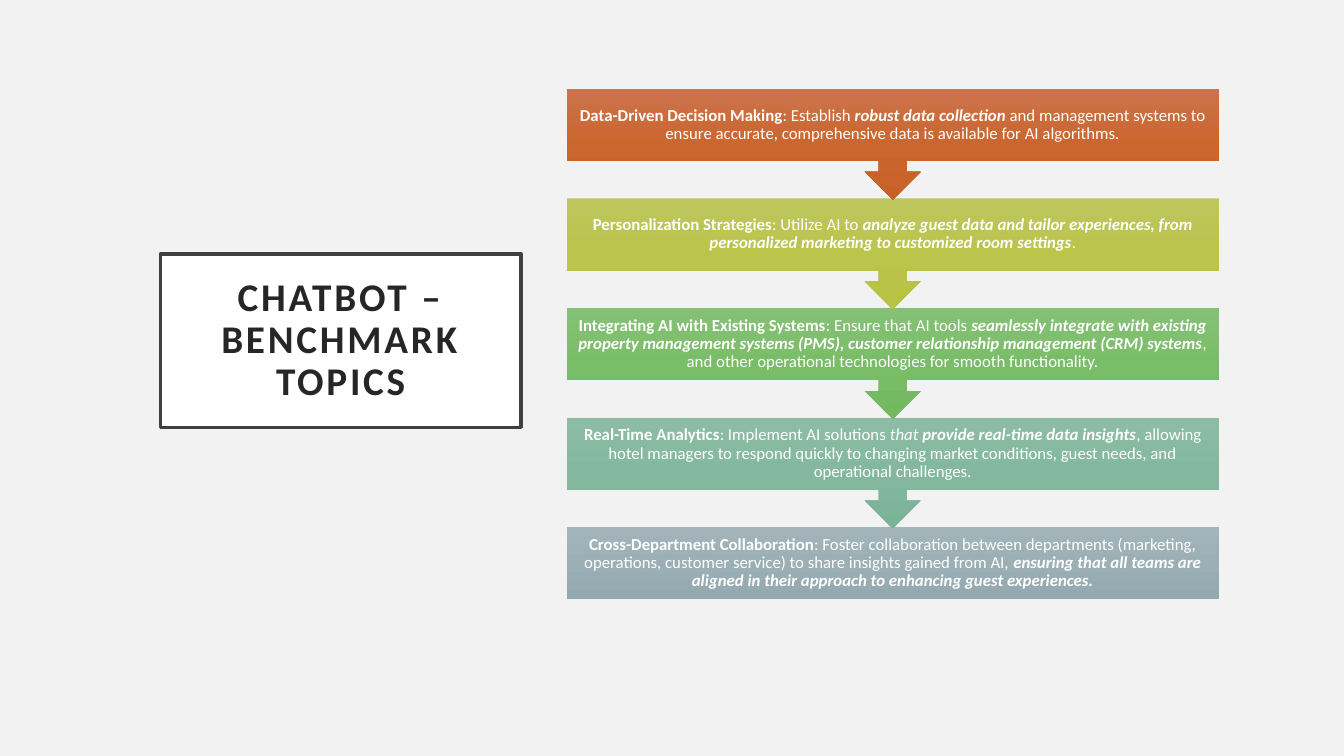
import copy
from dataclasses import dataclass

import pptx
import pptx.dml.color
import pptx.enum.shapes
import pptx.enum.text
import pptx.oxml.ns
import pptx.util

SHAPES = pptx.enum.shapes.MSO_SHAPE
ANCHOR = pptx.enum.text.MSO_ANCHOR
ALIGN = pptx.enum.text.PP_ALIGN
FONT = "Calibri"

# Step flow, in percent of the slide's width and height
FLOW_LEFT, FLOW_WIDTH = 42.16, 48.53
FLOW_TOP, STEP_PITCH = 11.73, 14.5
CALLOUT_HEIGHT, BODY_HEIGHT = 14.67, 9.5


@dataclass(frozen=True)
class Area:
    """A rectangle in percent of the slide's size."""
    left: float
    top: float
    width: float
    height: float


@dataclass(frozen=True)
class Span:
    text: str
    bold: bool = False
    italic: bool = False


@dataclass(frozen=True)
class Step:
    shades: tuple[str, str, str]
    spans: tuple[Span, ...]


TITLE_AREA = Area(11.93, 33.6, 26.85, 22.93)

STEPS = (
    Step(("CC734B", "CB662F", "C86128"), (
        Span("Data-Driven Decision Making", bold=True),
        Span(": Establish "),
        Span("robust data collection", bold=True, italic=True),
        Span(" and management systems to ensure accurate, comprehensive data "
             "is available for AI algorithms."))),
    Step(("BEC65E", "BBC44B", "B8C243"), (
        Span("Personalization Strategies", bold=True),
        Span(": Utilize AI to "),
        Span("analyze guest data and tailor experiences, from personalized "
             "marketing to customized room settings", bold=True, italic=True),
        Span("."))),
    Step(("85C076", "7ABD68", "73B960"), (
        Span("Integrating AI with Existing Systems", bold=True),
        Span(": Ensure that AI tools "),
        Span("seamlessly integrate with existing property management systems "
             "(PMS), customer relationship management (CRM) systems",
             bold=True, italic=True),
        Span(",", italic=True),
        Span(" and other operational technologies for smooth functionality."))),
    Step(("8DBCA5", "83B89E", "7BB398"), (
        Span("Real-Time Analytics", bold=True),
        Span(": Implement AI solutions "),
        Span("that ", italic=True),
        Span("provide real-time data insights", bold=True, italic=True),
        Span(", allowing hotel managers to respond quickly to changing market "
             "conditions, guest needs, and operational challenges."))),
    Step(("A3B5BB", "9BAFB5", "93A9AF"), (
        Span("Cross-Department Collaboration", bold=True),
        Span(": Foster collaboration between departments (marketing, "
             "operations, customer service) to share insights gained from AI, "),
        Span("ensuring that all teams are aligned in their approach to "
             "enhancing guest experiences.", bold=True, italic=True))),
)

deck = pptx.Presentation()
deck.slide_width = pptx.util.Inches(13.33)
deck.slide_height = pptx.util.Inches(7.5)


def color(value: str) -> pptx.dml.color.RGBColor:
    return pptx.dml.color.RGBColor.from_string(value)


def bounds(area: Area) -> tuple[int, int, int, int]:
    return (int(deck.slide_width * area.left / 100),
            int(deck.slide_height * area.top / 100),
            int(deck.slide_width * area.width / 100),
            int(deck.slide_height * area.height / 100))


def write(box, spans: tuple[Span, ...], size: float, ink: str,
          inset: float, tracking: int = 0) -> None:
    frame = box.text_frame
    frame.word_wrap = True
    frame.auto_size = pptx.enum.text.MSO_AUTO_SIZE.NONE
    frame.vertical_anchor = ANCHOR.MIDDLE
    margin = pptx.util.Inches(inset)
    frame.margin_left = frame.margin_right = margin
    frame.margin_top = frame.margin_bottom = margin
    para = frame.paragraphs[0]
    para.alignment = ALIGN.CENTER
    para.line_spacing = 0.9
    for span in spans:
        run = para.add_run()
        run.text = span.text
        run.font.name = FONT
        run.font.size = pptx.util.Pt(size)
        run.font.bold = span.bold
        run.font.italic = span.italic
        run.font.color.rgb = color(ink)
        if tracking:
            run.font._element.set("spc", str(tracking))


def shade(box, shades: tuple[str, str, str]) -> None:
    """Fill from top to bottom with three evenly spaced shades."""
    box.fill.gradient()
    box.fill.gradient_angle = 270
    stop_list = box._element.spPr.find(".//" + pptx.oxml.ns.qn("a:gsLst"))
    stop_list.insert(1, copy.deepcopy(stop_list[0]))
    for index, (stop, value) in enumerate(zip(box.fill.gradient_stops, shades)):
        stop.position = index / 2
        stop.color.rgb = color(value)


def add_title(page, text: str) -> None:
    box = page.shapes.title
    box.left, box.top, box.width, box.height = bounds(TITLE_AREA)
    box.fill.solid()
    box.fill.fore_color.rgb = color("FFFFFF")
    box.line.color.rgb = color("404040")
    box.line.width = pptx.util.Pt(2.5)
    write(box, (Span(text, bold=True),), 28, "262626", 0.2, tracking=200)


def add_step(page, row: int, step: Step) -> None:
    is_last = row == len(STEPS) - 1
    kind = SHAPES.RECTANGLE if is_last else SHAPES.DOWN_ARROW_CALLOUT
    height = BODY_HEIGHT if is_last else CALLOUT_HEIGHT
    area = Area(FLOW_LEFT, FLOW_TOP + row * STEP_PITCH, FLOW_WIDTH, height)
    box = page.shapes.add_shape(kind, *bounds(area))
    box.shadow.inherit = False
    box.line.fill.background()
    shade(box, step.shades)
    write(box, step.spans, 12, "FFFFFF", 0.09)


def main() -> None:
    page = deck.slides.add_slide(deck.slide_layouts[5])
    page.background.fill.solid()
    page.background.fill.fore_color.rgb = color("F2F2F2")
    add_title(page, "CHATBOT – BENCHMARK TOPICS")
    # Bottom step first, so each arrow tip lies over the step below it
    for row, step in reversed(list(enumerate(STEPS))):
        add_step(page, row, step)
    deck.save("out.pptx")


if __name__ == "__main__":
    main()
